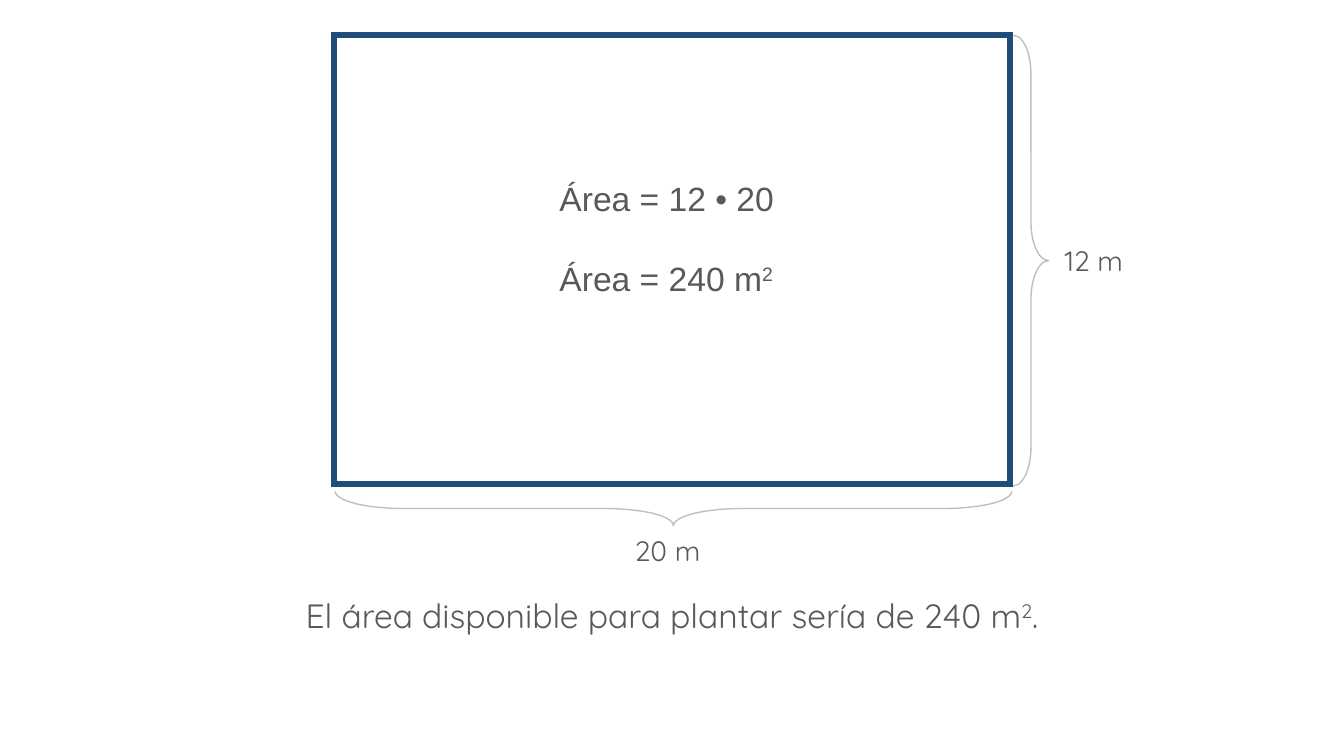
from lxml import etree
from pptx import Presentation
from pptx.dml.color import RGBColor
from pptx.enum import shapes, text
from pptx.oxml import ns
from pptx.util import Inches, Pt

NAVY = RGBColor(0x1E, 0x4E, 0x79)
SILVER = RGBColor(0xBF, 0xBF, 0xBF)
GREY = RGBColor(0x59, 0x59, 0x59)
WHITE = RGBColor(0xFF, 0xFF, 0xFF)
SQUARED = ("2", True)


def set_values(target, values):
    """Set each named value as an attribute of the target."""
    for name, value in values.items():
        setattr(target, name, value)


def add_outline(slide, kind, place, colour, width):
    """Add an unfilled preset shape with a coloured outline."""
    outline = slide.shapes.add_shape(kind, *map(Inches, place))
    outline.shadow.inherit = False
    outline.fill.background()
    outline.line.color.rgb = colour
    outline.line.width = Pt(width)
    return outline


def add_plot(slide, place):
    """Add the rectangular plot of land with sharp corners."""
    plot = add_outline(slide, shapes.MSO_SHAPE.RECTANGLE, place, NAVY, 4.5)
    plot.fill.solid()
    plot.fill.fore_color.rgb = WHITE
    corner = etree.SubElement(plot.line._get_or_add_ln(), ns.qn("a:miter"))
    corner.set("lim", "800000")


def add_brace(slide, place, rotation, curve):
    """Add a brace that measures one side of the plot."""
    brace = add_outline(slide, shapes.MSO_SHAPE.LEFT_BRACE, place, SILVER, 1)
    brace.rotation = rotation
    brace.adjustments[0] = curve


def add_text(slide, place, lines, size, font="Quicksand", align=None, gap=0, **frame):
    """Add lines of text, each a list of (wording, raised) pairs."""
    box = slide.shapes.add_textbox(*map(Inches, place)).text_frame
    set_values(box, {"word_wrap": True, **frame})
    for index, line in enumerate(lines):
        paragraph = box.add_paragraph() if index else box.paragraphs[0]
        paragraph.alignment = align
        if index:
            paragraph.space_before = Pt(gap)
        for wording, raised in line:
            run = paragraph.add_run()
            run.text = wording
            set_values(run.font, {"name": font, "size": Pt(size)})
            run.font.color.rgb = GREY
            if raised:
                run._r.get_or_add_rPr().set("baseline", "30000")


def main():
    """Build the slide on the area of the plot."""
    deck = Presentation()
    set_values(deck, {"slide_width": Inches(13.33), "slide_height": Inches(7.5)})
    slide = deck.slides.add_slide(deck.slide_layouts[6])
    centre = text.PP_ALIGN.CENTER
    grow = {"auto_size": text.MSO_AUTO_SIZE.SHAPE_TO_FIT_TEXT}

    add_plot(slide, (3.31, 0.35, 6.71, 4.45))
    add_brace(slide, (6.51, 1.69, 0.34, 6.71), 270, 1.995)
    add_text(slide, (5.95, 5.24, 1.34, 0.44), [[("20 m", False)]], 20,
             align=centre, **grow)
    add_brace(slide, (10.05, 0.35, 0.35, 4.47), 180, 1.089)
    add_text(slide, (10.46, 2.37, 1.34, 0.44), [[("12 m", False)]], 20, **grow)

    answer = [("El área disponible para plantar sería de 240 m", False),
              SQUARED, (".", False)]
    add_text(slide, (0, 5.8, 13.33, 0.69), [answer], 24, align=centre,
             margin_top=Inches(0.1), margin_bottom=Inches(0.1))

    working = [[("Área = 12 • 20", False)], [("Área = 240 m", False), SQUARED]]
    add_text(slide, (5.45, 1.72, 2.41, 1.31), working, 24, font="Arial",
             gap=28, **grow)
    deck.save("out.pptx")


if __name__ == "__main__":
    main()
